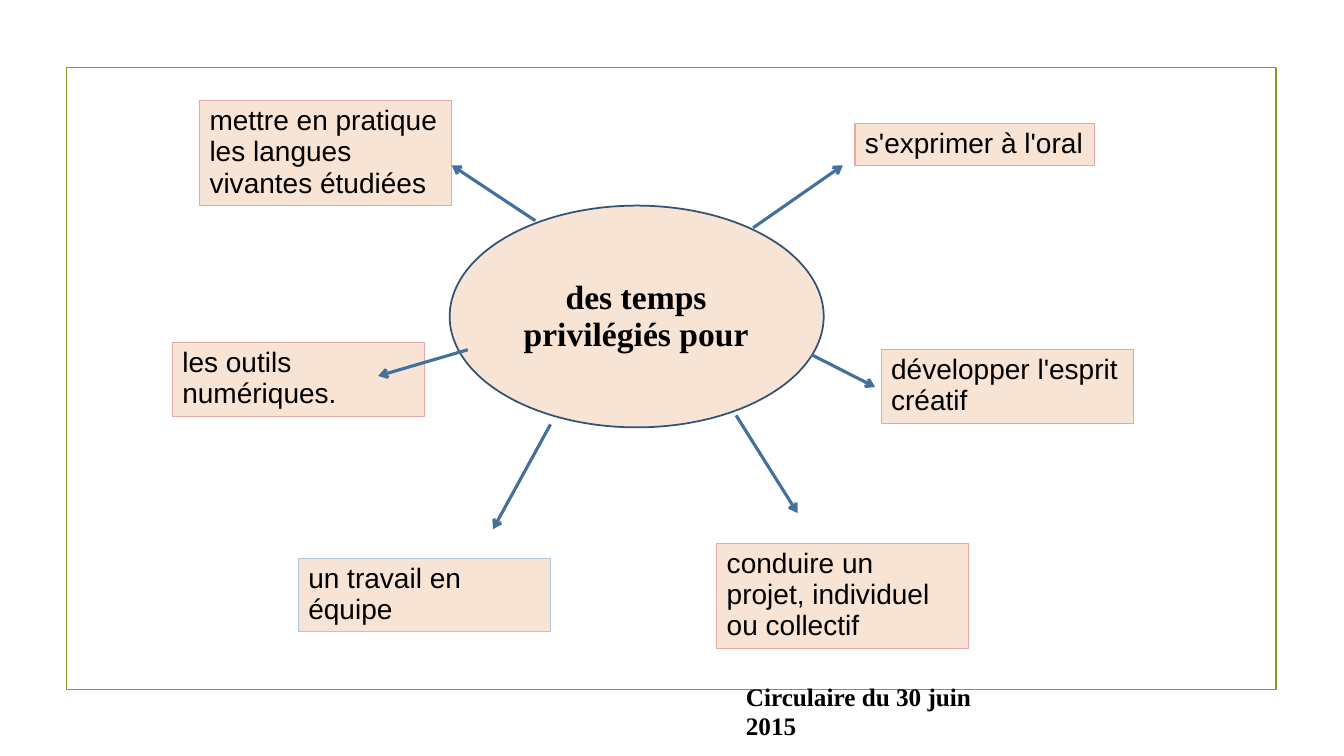
"""Mind map slide: what the privileged times are for."""
from lxml.etree import SubElement
from pptx import Presentation
from pptx.dml.color import RGBColor
from pptx.enum.shapes import MSO_CONNECTOR, MSO_SHAPE
from pptx.enum.text import MSO_ANCHOR, PP_ALIGN
from pptx.oxml.ns import qn
from pptx.util import Inches, Pt

COLORS = {
    "frame": "83992A",
    "fill": "F7E4D4",
    "pink": "E3AAA5",
    "blue": "AFC6DD",
    "oval": "325374",
    "arrow": "44709D",
    "text": "000000",
}


def add_outline(kind, bounds, line_color, line_width, fill_color=None):
    shape = page.shapes.add_shape(kind, *map(Inches, bounds))
    shape.shadow.inherit = False
    if fill_color:
        shape.fill.solid()
        shape.fill.fore_color.rgb = RGBColor.from_string(COLORS[fill_color])
    else:
        shape.fill.background()
    shape.line.color.rgb = RGBColor.from_string(COLORS[line_color])
    shape.line.width = Pt(line_width)
    return shape


def write_text(box, text, font_name, size, bold=False, align=PP_ALIGN.LEFT):
    frame = box.text_frame
    frame.word_wrap = True
    frame.vertical_anchor = MSO_ANCHOR.TOP
    para = frame.paragraphs[0]
    para.text = text
    para.alignment = align
    para.line_spacing = 0.93
    para.font.name = font_name
    para.font.size = Pt(size)
    para.font.bold = bold
    para.font.color.rgb = RGBColor.from_string(COLORS["text"])


deck = Presentation()
deck.slide_width = Inches(13.33)
deck.slide_height = Inches(7.5)
page = deck.slides.add_slide(deck.slide_layouts[6])

add_outline(MSO_SHAPE.RECTANGLE, (0.66, 0.67, 12, 6.17), "frame", 1.25)

caption = page.shapes.add_textbox(Inches(7.3), Inches(6.74), Inches(2.8), Inches(0.65))
write_text(caption, "Circulaire du 30 juin 2015", "Times New Roman", 18, bold=True)

goals = [
    ("développer l'esprit créatif", (8.74, 3.47, 2.5, 0.73), "pink"),
    ("un travail en équipe", (2.96, 5.54, 2.5, 0.73), "blue"),
    ("s'exprimer à l'oral", (8.48, 1.23, 2.38, 0.41), "pink"),
    ("conduire un projet, individuel ou collectif", (7.11, 5.39, 2.5, 1.04), "pink"),
    ("mettre en pratique les langues vivantes étudiées", (1.98, 1, 2.5, 1.04), "pink"),
    ("les outils numériques.", (1.71, 3.4, 2.5, 0.73), "pink"),
]
for text, bounds, border in goals:
    goal_box = add_outline(MSO_SHAPE.RECTANGLE, bounds, border, 0.75, "fill")
    write_text(goal_box, text, "Arial", 20)

add_outline(MSO_SHAPE.OVAL, (4.46, 2.04, 3.71, 2.2), "oval", 1.25, "fill")
center = page.shapes.add_textbox(Inches(5.06), Inches(2.72), Inches(2.5), Inches(0.85))
write_text(center, "des temps privilégiés pour", "Times New Roman", 24,
           bold=True, align=PP_ALIGN.CENTER)

arrows = [
    (5.31, 2.19, 4.48, 1.64),
    (7.47, 2.26, 8.36, 1.64),
    (7.3, 4.12, 7.91, 5.09),
    (5.46, 4.21, 4.89, 5.25),
    (4.64, 3.47, 3.75, 3.73),
    (8.05, 3.52, 8.68, 3.84),
]
for ends in arrows:
    arrow = page.shapes.add_connector(MSO_CONNECTOR.STRAIGHT, *map(Inches, ends))
    arrow.line.color.rgb = RGBColor.from_string(COLORS["arrow"])
    arrow.line.width = Pt(2.25)
    SubElement(arrow.line._get_or_add_ln(), qn("a:tailEnd"), type="arrow")
    SubElement(arrow._element.spPr, qn("a:effectLst"))

deck.save("out.pptx")
